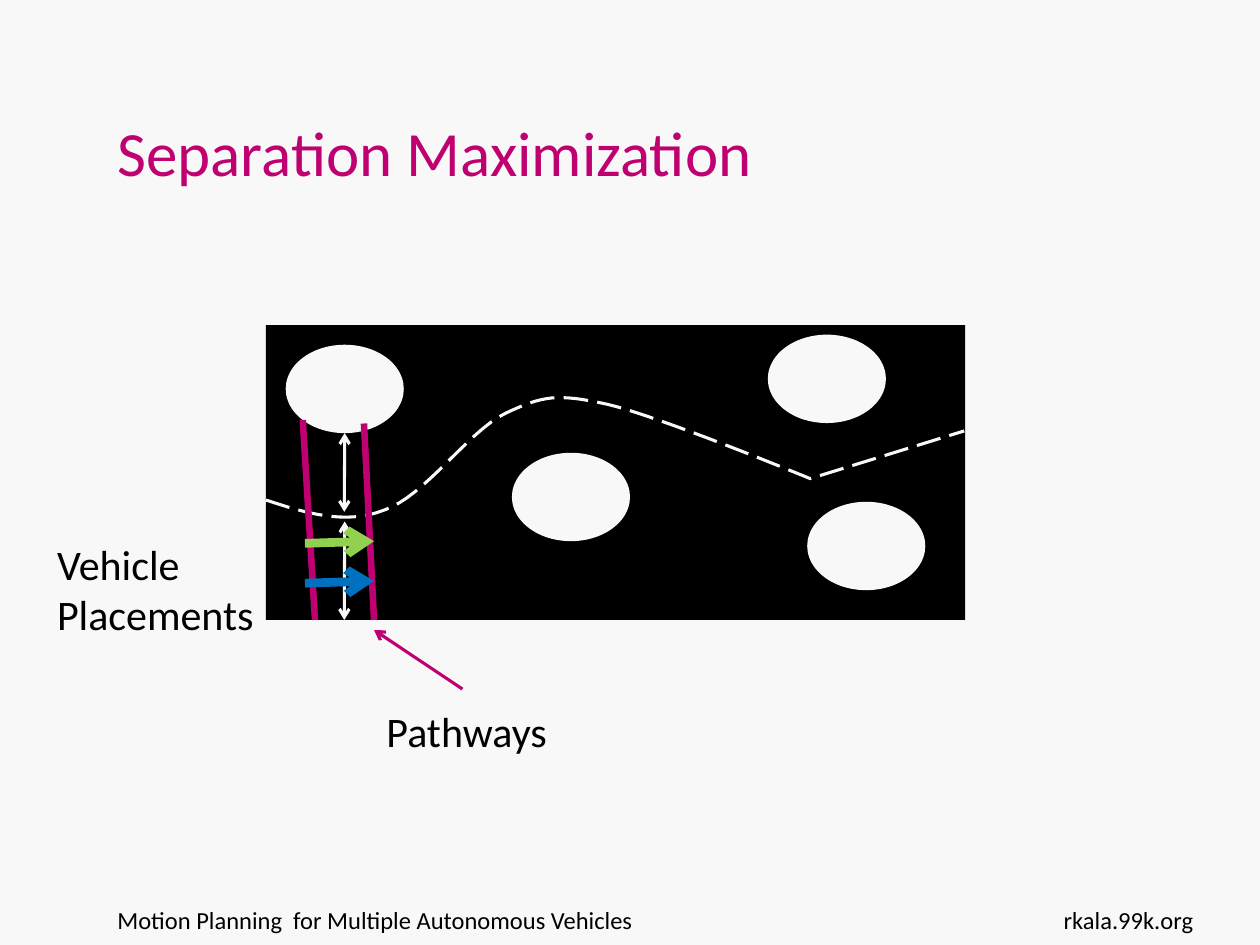
from lxml.etree import SubElement
from pptx import Presentation
from pptx.dml.color import RGBColor
from pptx.enum.dml import MSO_LINE
from pptx.enum.shapes import MSO_CONNECTOR, MSO_SHAPE
from pptx.enum.text import MSO_ANCHOR, PP_ALIGN
from pptx.oxml.ns import qn
from pptx.util import Pt

PALE, BLACK, PINK, GREEN, BLUE = "F8F8F8", "000000", "BF0071", "92D050", "0070C0"

# Content: text, box (left, top, width, height), size, colour, frame and paragraph format
TEXTS = [
    ("Motion Planning  for Multiple Autonomous Vehicles", (60, 513.5, 499, 37.5), 14, BLACK, {}, {}),
    ("Separation Maximization", (60, 21.5, 487.5, 90), 36, PINK,
     {"vertical_anchor": MSO_ANCHOR.BOTTOM, "word_wrap": False}, {}),
    ("rkala.99k.org", (581, 513.5, 108, 37.5), 14, BLACK, {}, {"alignment": PP_ALIGN.RIGHT}),
    ("Vehicle Placements", (25.5, 304, 146, 65.5), 24, BLACK, {}, {}),
    ("Pathways", (213.75, 399.5, 146, 36), 24, BLACK, {}, {}),
]

# Road and the obstacles on it
ROAD = (152, 185.75, 399.5, 168.5)
ROCK = (67.5, 50.5)
ROCKS = [(438.75, 191.25), (292.5, 258.75), (461.25, 286.75), (163.25, 197)]

# Dashed path: start, cubic curves (two controls and an end), then a straight end
START = (152, 285.75)
CURVES = [
    ((174.25, 293), (197.25, 300.25), (219.5, 291.5)),
    ((242.75, 283.75), (267.75, 246.25), (288.75, 236.25)),
    ((310.25, 226), (318.25, 224.75), (347, 231)),
    ((375.75, 237.5), (463, 273.5), (463, 273.5)),
]
END = (551, 246.25)
STEPS = 16

# Lines: from, to, colour, width, arrowheads
LINES = [
    ((197, 247.5), (196.75, 292.5), PALE, 1.75, ("headEnd", "tailEnd")),
    ((197, 298), (196.75, 354.25), PALE, 1.75, ("headEnd", "tailEnd")),
    ((264.25, 393.75), (213.75, 360), PINK, 1.75, ("tailEnd",)),
    ((173, 240), (180, 354.25), PINK, 3.75, ()),
    ((208, 242), (213.75, 354.25), PINK, 3.75, ()),
    ((174.25, 310.5), (213.75, 309.25), GREEN, 5, ("tailEnd",)),
    ((174.25, 333.25), (213.75, 332), BLUE, 5, ("tailEnd",)),
]


def color(code):
    return RGBColor.from_string(code)


def pts(vals):
    return [Pt(v) for v in vals]


def apply(obj, style):
    for name, val in style.items():
        setattr(obj, name, val)


def paint(shape, code):
    shape.shadow.inherit = False
    shape.fill.solid()
    shape.fill.fore_color.rgb = color(code)
    shape.line.fill.background()


def add_text(shapes, text, box, size, code, frame, para):
    body = shapes.add_textbox(*pts(box)).text_frame
    apply(body, {"word_wrap": True, **frame})
    line = body.paragraphs[0]
    apply(line, {"text": text, **para})
    apply(line.runs[0].font, {"name": "Calibri", "size": Pt(size)})
    line.runs[0].font.color.rgb = color(code)


def add_line(shapes, start, end, code, width, heads):
    link = shapes.add_connector(MSO_CONNECTOR.STRAIGHT, *pts(start + end))
    link.line.color.rgb = color(code)
    link.line.width = Pt(width)
    props = link.line._get_or_add_ln()
    for head in heads:
        SubElement(props, qn("a:" + head), type="arrow")
    SubElement(link._element.spPr, qn("a:effectLst"))


def sample(start, curves):
    for c1, c2, end in curves:
        for step in range(1, STEPS + 1):
            t = step / STEPS
            u = 1 - t
            yield tuple(u**3 * a + 3 * u * u * t * b + 3 * u * t * t * c + t**3 * d
                        for a, b, c, d in zip(start, c1, c2, end))
        start = end


def add_path(shapes):
    pen = shapes.build_freeform(*pts(START), scale=1.0)
    pen.add_line_segments([pts(p) for p in (*sample(START, CURVES), END)], close=False)
    path = pen.convert_to_shape()
    path.shadow.inherit = False
    path.fill.background()
    path.line.color.rgb = color(PALE)
    apply(path.line, {"width": Pt(1.75), "dash_style": MSO_LINE.LONG_DASH})


def main():
    deck = Presentation()
    apply(deck, {"slide_width": Pt(720), "slide_height": Pt(540)})
    slide = deck.slides.add_slide(deck.slide_layouts[6])
    slide.background.fill.solid()
    slide.background.fill.fore_color.rgb = color(PALE)
    shapes = slide.shapes

    # Road, obstacles and dashed path
    paint(shapes.add_shape(MSO_SHAPE.RECTANGLE, *pts(ROAD)), BLACK)
    for spot in ROCKS:
        paint(shapes.add_shape(MSO_SHAPE.OVAL, *pts(spot + ROCK)), PALE)
    add_path(shapes)

    # Pathways, gaps and vehicles, then labels
    for item in LINES:
        add_line(shapes, *item)
    for item in TEXTS:
        add_text(shapes, *item)
    deck.save("out.pptx")


if __name__ == "__main__":
    main()
